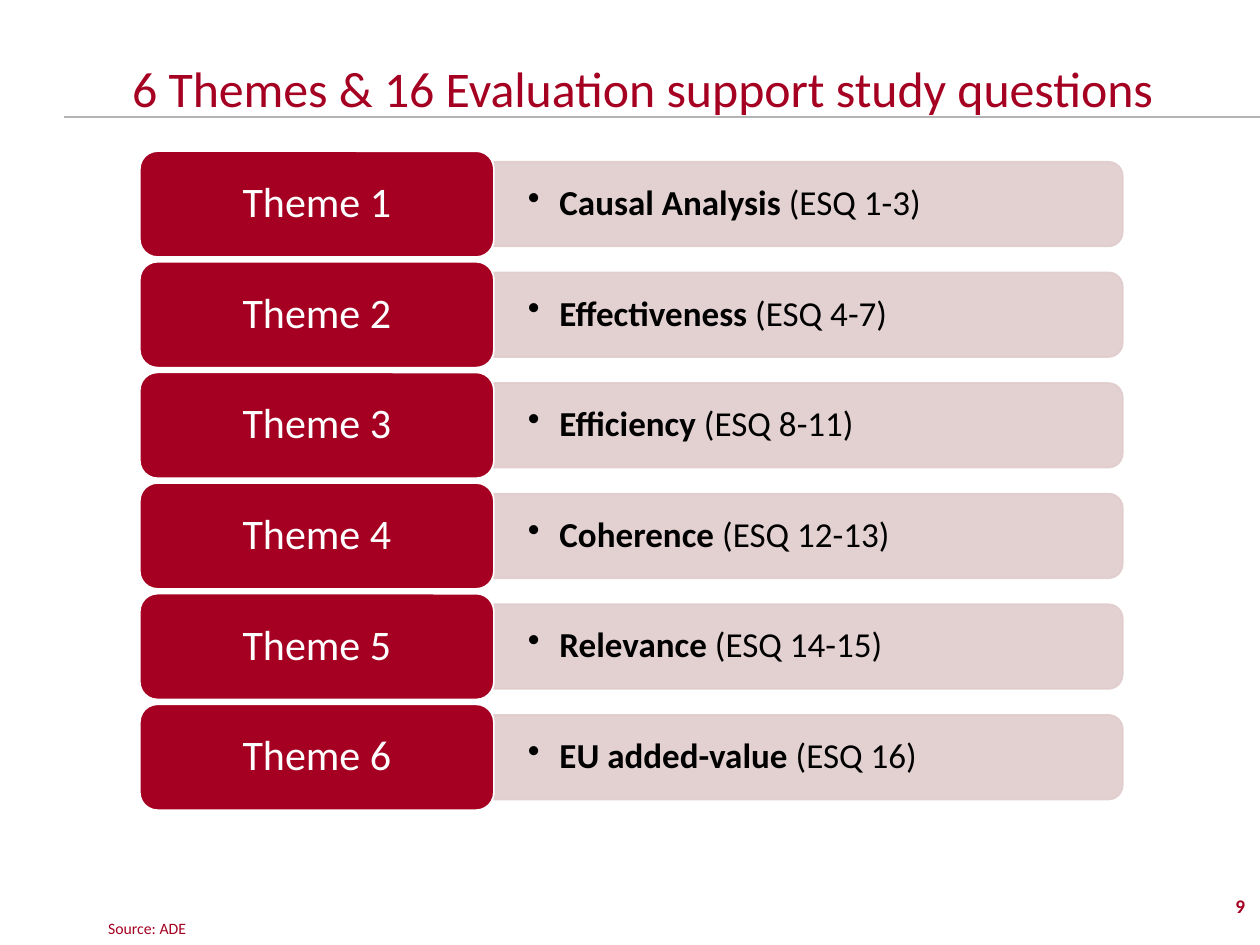
from lxml.etree import SubElement
from pptx import Presentation
from pptx.dml.color import RGBColor
from pptx.enum.shapes import MSO_CONNECTOR, MSO_SHAPE as SHAPE
from pptx.enum.text import MSO_ANCHOR as ANCHOR, PP_ALIGN as ALIGN
from pptx.oxml.ns import qn
from pptx.util import Inches, Pt

TITLE = "6 Themes & 16 Evaluation support study questions"
SOURCE = "Source: ADE"
PAGE = "9"
THEMES = [
    ("Causal Analysis", "ESQ 1-3"),
    ("Effectiveness", "ESQ 4-7"),
    ("Efficiency", "ESQ 8-11"),
    ("Coherence", "ESQ 12-13"),
    ("Relevance", "ESQ 14-15"),
    ("EU added-value", "ESQ 16"),
]
RED, PINK, GREY, WHITE, BLACK = "A50021", "E1CCCD", "B4B4B4", "FFFFFF", "000000"
FONT = "Calibri"
WIDTH, HEIGHT = 10, 7.5
LEFT, TOP, PITCH = 1.11, 1.2, 0.878
LABEL_W, LABEL_H = 2.81, 0.84
BAR_W, BAR_H, BAR_TEXT_H = 4.99, 0.67, 0.6


def rgb(value):
    """Turn a hex string into a colour."""
    return RGBColor.from_string(value)


def style(p, size, color, align=ALIGN.LEFT, spacing=None):
    """Format a paragraph and all its runs."""
    p.alignment = align
    if spacing:
        p.line_spacing = spacing
    for r in p.runs:
        r.font.name, r.font.size = FONT, Pt(size)
        r.font.color.rgb = rgb(color)


def add_text(slide, box, anchor):
    """Add an empty wrapping text box and return its text frame."""
    tf = slide.shapes.add_textbox(*map(Inches, box)).text_frame
    tf.word_wrap, tf.vertical_anchor = True, anchor
    return tf


def add_line_of_text(slide, text, box, size, color, align=ALIGN.LEFT, spacing=None):
    """Add a bottom-anchored text box holding one paragraph."""
    tf = add_text(slide, box, ANCHOR.BOTTOM)
    tf.text = text
    style(tf.paragraphs[0], size, color, align, spacing)
    return tf.paragraphs[0]


def add_block(slide, kind, box, fill, line):
    """Add a filled, outlined preset shape without a shadow."""
    sp = slide.shapes.add_shape(kind, *map(Inches, box))
    sp.shadow.inherit = False
    sp.fill.solid()
    sp.fill.fore_color.rgb = rgb(fill)
    sp.line.color.rgb = rgb(line)
    sp.line.width = Pt(1)
    return sp


def add_bar(slide, x, middle, name, questions):
    """Add the translucent bar of a theme with its bulleted text."""
    box = (x + (BAR_W - BAR_H) / 2, middle - BAR_W / 2, BAR_H, BAR_W)
    sp = add_block(slide, SHAPE.ROUND_2_SAME_RECTANGLE, box, PINK, PINK)
    sp.rotation = 90
    for clr in sp._element.spPr.iter(qn("a:srgbClr")):
        SubElement(clr, qn("a:alpha"), val="90000")

    tf = add_text(slide, (x, middle - BAR_TEXT_H / 2, BAR_W, BAR_TEXT_H), ANCHOR.MIDDLE)
    tf.margin_left = tf.margin_right = Inches(0.27)
    tf.margin_top = tf.margin_bottom = Inches(0.14)
    p = tf.paragraphs[0]
    pPr = p._p.get_or_add_pPr()
    pPr.set("marL", str(Inches(0.25)))
    pPr.set("indent", str(-Inches(0.25)))
    SubElement(pPr, qn("a:buChar"), char="•")
    for text, bold in ((name, True), (f" ({questions})", False)):
        r = p.add_run()
        r.text, r.font.bold = text, bold
    style(p, 20, BLACK, spacing=0.9)


def add_label(slide, x, y, text):
    """Add the red rounded label of a theme."""
    sp = add_block(slide, SHAPE.ROUNDED_RECTANGLE, (x, y, LABEL_W, LABEL_H), RED, WHITE)
    tf = sp.text_frame
    tf.text, tf.vertical_anchor = text, ANCHOR.MIDDLE
    style(tf.paragraphs[0], 24, WHITE, ALIGN.CENTER, 0.9)


def main():
    """Build the slide and save it."""
    prs = Presentation()
    prs.slide_width, prs.slide_height = Inches(WIDTH), Inches(HEIGHT)
    slide = prs.slides.add_slide(prs.slide_layouts[6])

    add_line_of_text(slide, SOURCE, (0.76, 7.09, 4.71, 0.4), 9, RED)
    rule = slide.shapes.add_connector(
        MSO_CONNECTOR.STRAIGHT, *map(Inches, (0.51, 0.93, WIDTH, 0.93)))
    rule.line.color.rgb, rule.line.width = rgb(GREY), Pt(1.5)
    SubElement(rule._element.spPr, qn("a:effectLst"))
    page = add_line_of_text(slide, PAGE, (7.83, 6.93, 2.15, 0.4), 11, RED, ALIGN.RIGHT)
    page.runs[0].font.bold = True
    add_line_of_text(slide, TITLE, (0.95, 0, 9.08, 0.99), 28.5, RED, spacing=0.9)

    for i, (name, questions) in enumerate(THEMES):
        y = TOP + i * PITCH
        add_bar(slide, LEFT + LABEL_W, y + LABEL_H / 2, name, questions)
        add_label(slide, LEFT, y, f"Theme {i + 1}")

    prs.save("out.pptx")


if __name__ == "__main__":
    main()
